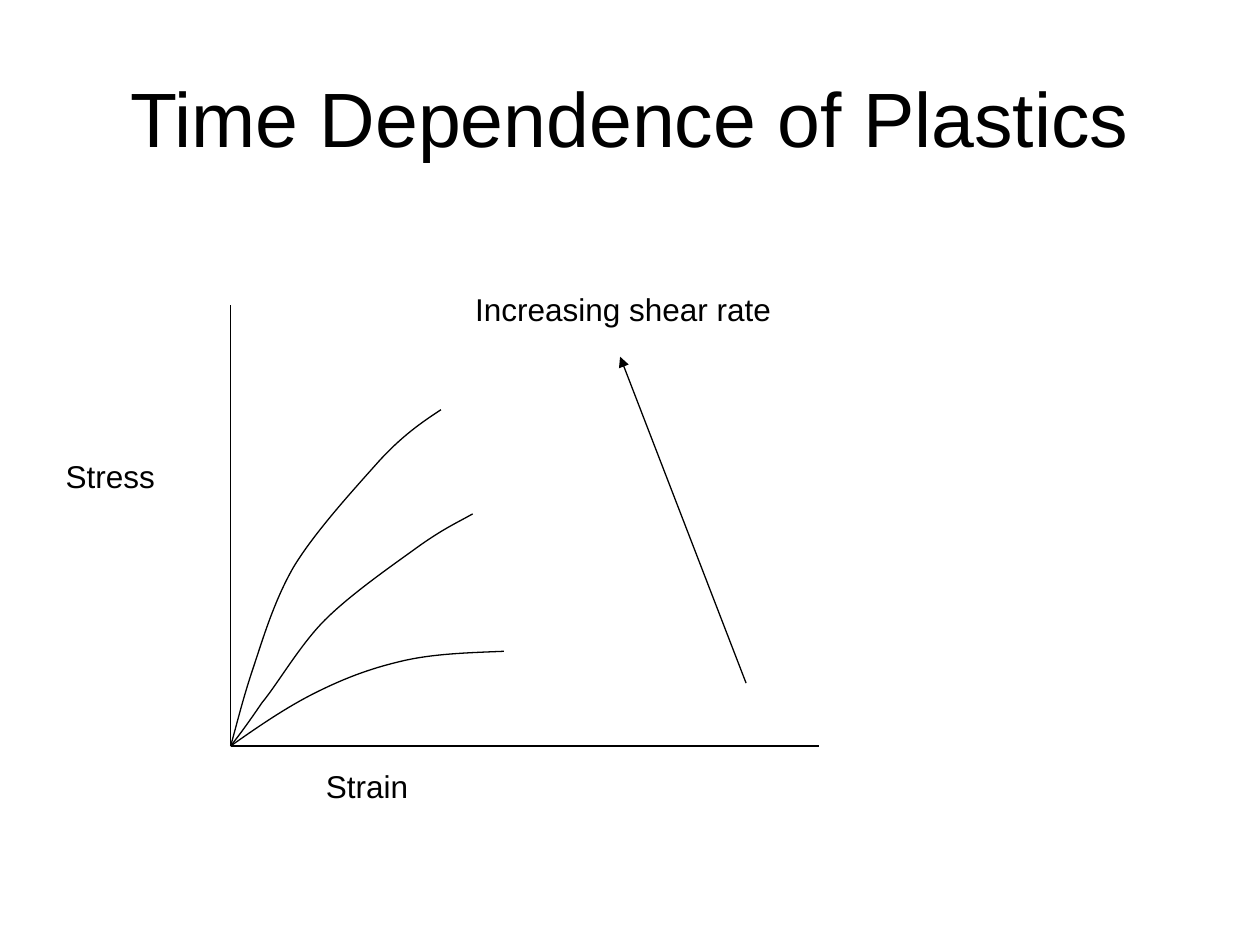
from dataclasses import dataclass

from lxml import etree
from pptx import Presentation
from pptx import util as u
from pptx.dml.color import RGBColor
from pptx.enum import shapes, text
from pptx.oxml import ns

BLACK = RGBColor(0, 0, 0)
FONT = "Arial"
LINE_WIDTH = u.Pt(0.75)

Point = tuple[float, float]


@dataclass(frozen=True)
class Label:
    text: str
    left: float
    top: float
    width: float


@dataclass(frozen=True)
class Line:
    start: Point
    end: Point
    arrow: bool = False


@dataclass(frozen=True)
class Curve:
    """Chain of cubic Bézier segments from the origin, three points each."""
    points: list[Point]


# All lengths are in centimetres.
ORIGIN: Point = (4.65, 15.04)
LABEL_HEIGHT = 1.02

LINES = [
    Line((ORIGIN[0], 6.15), ORIGIN),
    Line(ORIGIN, (16.51, ORIGIN[1])),
    Line((15.04, 13.77), (12.5, 7.19), arrow=True),
]
CURVES = [
    Curve([(4.78, 14.58), (4.88, 14.15), (5.08, 13.54),
           (5.28, 12.95), (5.51, 12.14), (5.92, 11.43),
           (6.35, 10.72), (7.14, 9.86), (7.62, 9.32),
           (8.1, 8.79), (8.51, 8.51), (8.89, 8.26)]),
    Curve([(4.83, 14.81), (4.98, 14.61), (5.28, 14.17),
           (5.61, 13.77), (6.05, 13), (6.55, 12.5),
           (7.09, 11.96), (7.98, 11.35), (8.46, 11),
           (8.97, 10.64), (9.25, 10.52), (9.53, 10.36)]),
    Curve([(5.23, 14.63), (5.79, 14.25), (6.35, 13.97),
           (6.91, 13.69), (7.42, 13.49), (8.05, 13.34),
           (8.69, 13.18), (9.42, 13.16), (10.16, 13.13)]),
]
LABELS = [
    Label("Stress", 1.07, 9.09, 2.31),
    Label("Strain", 6.32, 15.34, 2.16),
    Label("Increasing shear rate", 9.32, 5.72, 6.48),
]


def write_text(shape, content: str, *, size: float, wrap: bool,
               anchor=text.MSO_ANCHOR.TOP) -> None:
    frame = shape.text_frame
    frame.word_wrap = wrap
    frame.vertical_anchor = anchor
    paragraph = frame.paragraphs[0]
    paragraph.text = content
    paragraph.alignment = text.PP_ALIGN.CENTER
    paragraph.font.name = FONT
    paragraph.font.size = u.Pt(size)
    paragraph.font.color.rgb = BLACK


def style_line(shape) -> None:
    shape.line.color.rgb = BLACK
    shape.line.width = LINE_WIDTH


def draw_line(slide, line: Line) -> None:
    connector = slide.shapes.add_connector(
        shapes.MSO_CONNECTOR.STRAIGHT,
        *(u.Cm(value) for value in line.start + line.end))
    style_line(connector)
    if line.arrow:
        etree.SubElement(connector.line._get_or_add_ln(),
                         ns.qn("a:tailEnd"), type="triangle")
    etree.SubElement(connector._element.spPr, ns.qn("a:effectLst"))


def draw_curve(slide, curve: Curve) -> None:
    """Draw the control polygon, then turn each three sides into one Bézier."""
    builder = slide.shapes.build_freeform(*(u.Cm(value) for value in ORIGIN))
    builder.add_line_segments(
        [(u.Cm(x), u.Cm(y)) for x, y in curve.points], close=False)
    shape = builder.convert_to_shape()
    shape.shadow.inherit = False
    shape.fill.background()
    style_line(shape)

    outline = shape._element.find(".//" + ns.qn("a:path"))
    sides = outline.findall(ns.qn("a:lnTo"))
    for first in range(0, len(sides), 3):
        bezier = etree.SubElement(outline, ns.qn("a:cubicBezTo"))
        for side in sides[first:first + 3]:
            bezier.append(side[0])
            outline.remove(side)


def draw_label(slide, label: Label) -> None:
    box = slide.shapes.add_textbox(u.Cm(label.left), u.Cm(label.top),
                                   u.Cm(label.width), u.Cm(LABEL_HEIGHT))
    write_text(box, label.text, size=18, wrap=False)
    box.text_frame.auto_size = text.MSO_AUTO_SIZE.SHAPE_TO_FIT_TEXT


def main() -> None:
    presentation = Presentation()
    presentation.slide_width = u.Cm(25.4)
    presentation.slide_height = u.Cm(19.05)
    title_only = presentation.slide_layouts.get_by_name("Title Only")
    slide = presentation.slides.add_slide(title_only)

    title = slide.shapes.title
    title.left, title.top = u.Cm(1.27), u.Cm(0.76)
    title.width, title.height = u.Cm(22.86), u.Cm(3.18)
    write_text(title, "Time Dependence of Plastics", size=44, wrap=True,
               anchor=text.MSO_ANCHOR.MIDDLE)

    for line in LINES:
        draw_line(slide, line)
    for curve in CURVES:
        draw_curve(slide, curve)
    for label in LABELS:
        draw_label(slide, label)

    presentation.save("out.pptx")


if __name__ == "__main__":
    main()
